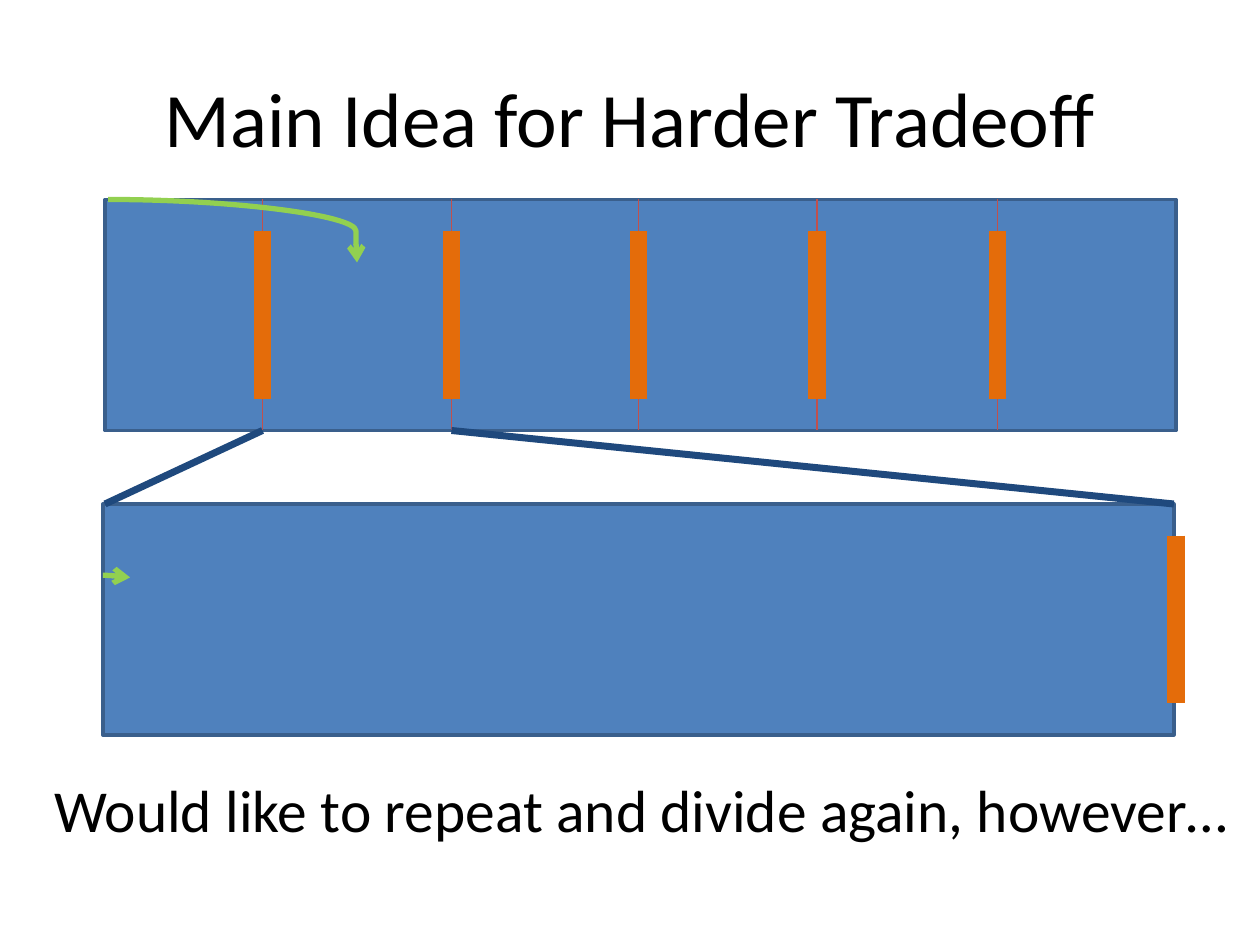
from pptx import Presentation
from pptx.dml.color import RGBColor
from pptx.enum.shapes import MSO_CONNECTOR as Link, MSO_SHAPE as Shape
from pptx.enum.text import MSO_ANCHOR as Anchor, MSO_AUTO_SIZE as Fit, PP_ALIGN as Align
from pptx.oxml.ns import qn
from pptx.util import Inches, Pt
from lxml.etree import SubElement

COLORS = {
    "text": "000000", "bar": "4F81BD", "edge": "3A5F8C", "divider": "C0504D",
    "marker": "E46C0A", "jump": "92D050", "zoom": "1F497D",
}
CELLS_PER_INCH = 12  # the page is a grid of 120 columns by 90 rows
INSET = 3            # rows between a bar's edge and its markers


def grid(cells):
    return Inches(cells / CELLS_PER_INCH)


def color(name):
    return RGBColor.from_string(COLORS[name])


def write(shape, text, size=34, align=Align.LEFT, anchor=Anchor.TOP, wrap=True, fit=Fit.NONE):
    frame = shape.text_frame
    frame.word_wrap, frame.auto_size, frame.vertical_anchor = wrap, fit, anchor
    para = frame.paragraphs[0]
    para.alignment = align
    span = para.add_run()
    span.text = text
    span.font.size, span.font.name = Pt(size), "Calibri"
    span.font.color.rgb = color("text")


def add_line(parent, start, end, name, width, kind=Link.STRAIGHT):
    line = parent.shapes.add_connector(kind, *map(grid, (*start, *end)))
    line.line.color.rgb = color(name)
    line.line.width = Pt(width)
    SubElement(line._element.spPr, qn("a:effectLst"))
    return line


def add_jump(page, start, end, bend=0.5):
    """Curved arrow; bend is the share of its width where it turns."""
    arrow = add_line(page, start, end, "jump", 3, Link.CURVE)
    SubElement(arrow.line._get_or_add_ln(), qn("a:tailEnd"), type="arrow")
    guides = arrow._element.spPr.find(qn("a:prstGeom")).get_or_add_avLst()
    SubElement(guides, qn("a:gd"), name="adj1", fmla=f"val {round(bend * 100000)}")


def add_bar(page, box):
    bar = page.shapes.add_shape(Shape.RECTANGLE, *map(grid, box))
    bar.shadow.inherit = False
    bar.fill.solid()
    bar.fill.fore_color.rgb = color("bar")
    bar.line.color.rgb = color("edge")
    bar.line.width = Pt(2)


def add_marks(parent, columns, box, name, width, inset=0):
    """Vertical lines across a bar, at the given columns from its left."""
    left, top, _, height = box
    for column in columns:
        x = left + column
        add_line(parent, (x, top + inset), (x, top + height - inset), name, width)


def add_whole(page, box, columns):
    left, top, _, _ = box
    add_bar(page, box)
    add_marks(page.shapes.add_group_shape(), columns, box, "divider", 1)
    add_marks(page.shapes.add_group_shape(), columns, box, "marker", 10, INSET)
    add_jump(page, (left + 0.3, top), (left + 24, top + 6), bend=0.996)


def add_part(page, box, source, columns):
    """One section of the source bar, enlarged."""
    left, top, width, _ = box
    add_bar(page, box)
    source_bottom = source[1] + source[3]
    for column, corner in zip(columns, (left + 0.2, left + width)):
        add_line(page, (source[0] + column, source_bottom), (corner, top), "zoom", 4)
    add_marks(page, [width + 0.2], box, "marker", 10, INSET)
    add_jump(page, (left, top + 6.8), (left + 2.6, top + 7))


def add_title(page, box, text):
    title = page.shapes.title
    title.left, title.top, title.width, title.height = map(grid, box)
    write(title, text, size=44, align=Align.CENTER, anchor=Anchor.MIDDLE)


def add_caption(page, box, text):
    caption = page.shapes.add_textbox(*map(grid, box))
    write(caption, text, wrap=False, fit=Fit.SHAPE_TO_FIT_TEXT)


def main():
    deck = Presentation()
    deck.slide_width, deck.slide_height = grid(120), grid(90)
    page = deck.slides.add_slide(deck.slide_layouts[5])

    whole, part = (10, 19, 102, 22), (9.8, 48, 102, 22)
    columns = [15, 33, 50.8, 67.8, 85]
    add_title(page, (6, 3.6, 108, 15), "Main Idea for Harder Tradeoff")
    add_whole(page, whole, columns)
    add_part(page, part, whole, columns[:2])
    add_caption(page, (4, 73, 115.3, 8), "Would like to repeat and divide again, however…")
    deck.save("out.pptx")


if __name__ == "__main__":
    main()
